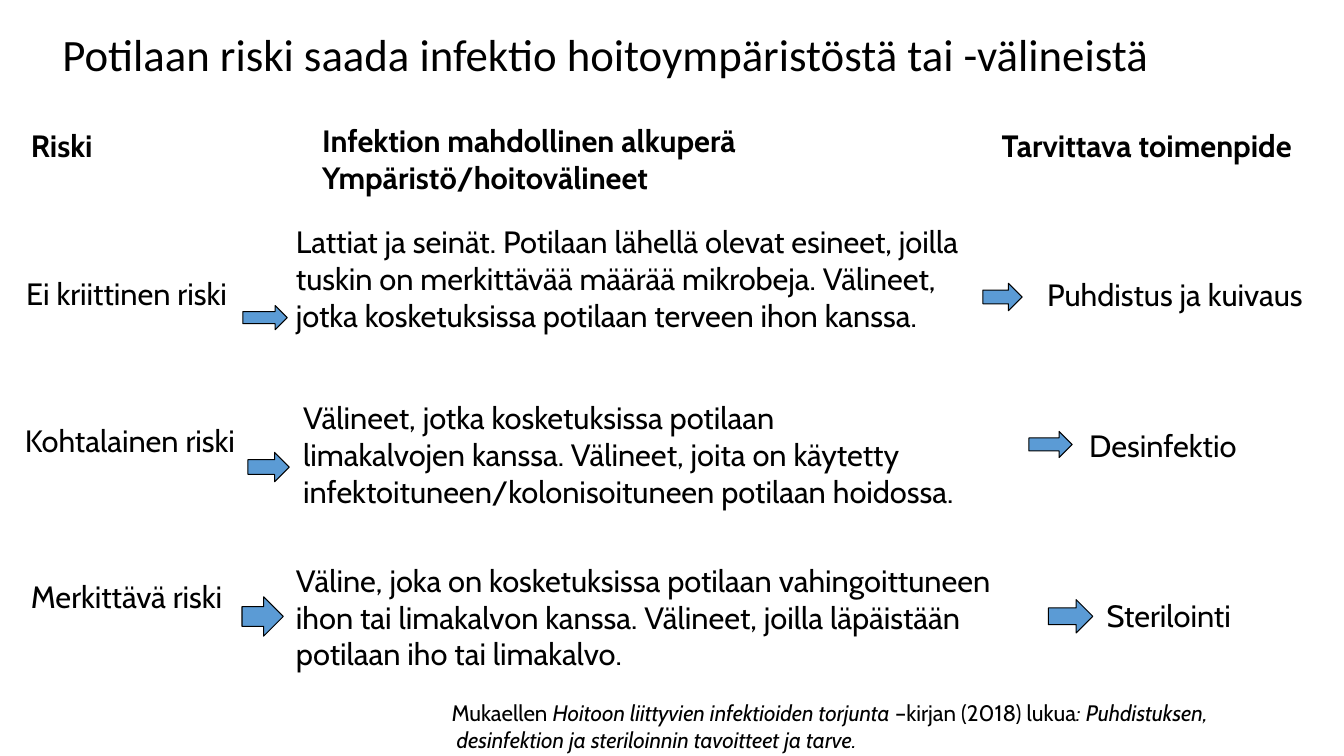
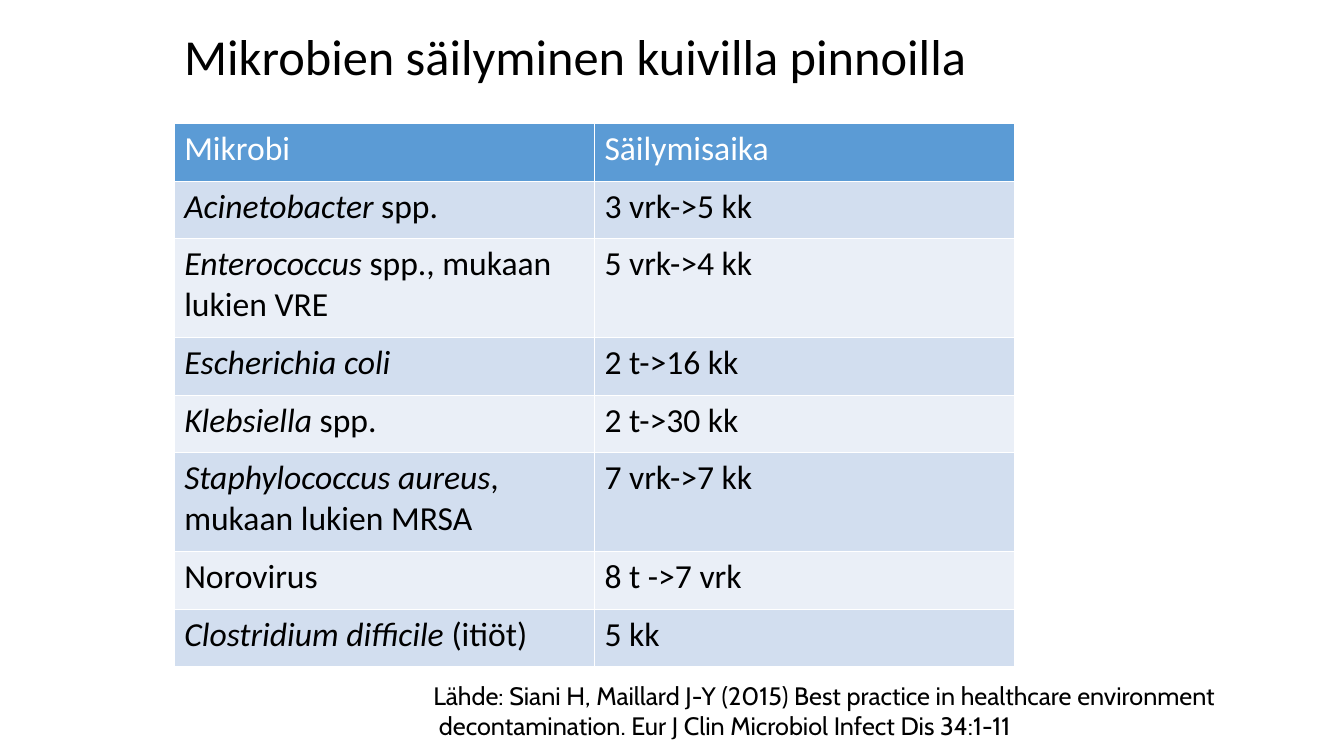
from lxml.etree import SubElement
from pptx import Presentation
from pptx.dml.color import RGBColor
from pptx.enum.shapes import MSO_SHAPE as Shape
from pptx.enum.text import MSO_ANCHOR as Anchor
from pptx.oxml.ns import qn
from pptx.util import Cm, Pt

COLORS = {"text": "000000", "accent": "5B9BD5", "white": "FFFFFF",
          "band_dark": "D2DEEF", "band_light": "EAEFF7"}
HEADING_FONT, BODY_FONT = "Calibri", "Cabin"

STYLES = {
    "title": {"name": HEADING_FONT, "size": Pt(32)},
    "large_title": {"name": HEADING_FONT, "size": Pt(36)},
    "heading": {"name": BODY_FONT, "size": Pt(22), "bold": True},
    "body": {"name": BODY_FONT, "size": Pt(22)},
    "source": {"name": BODY_FONT, "size": Pt(16)},
    "large_source": {"name": BODY_FONT, "size": Pt(18)},
    "cell": {"name": HEADING_FONT, "size": Pt(24), "bold": False},
}

# Boxes are left, top, width, height in centimetres.
COLUMN_HEADINGS = [
    ("Riski", (0.53, 3.07, 2.24, 1.19)),
    ("Infektion mahdollinen alkuperä\nYmpäristö/hoitovälineet", (7.87, 2.95, 12.01, 2.13)),
    ("Tarvittava toimenpide", (24.99, 3.07, 8.61, 1.19)),
]

# Each row has its top; the boxes of its parts are relative to that.
RISK_ROWS = [
    {"top": 5.49,
     "texts": [
         ("Ei kriittinen riski", (0.41, 1.32, 6.35, 1.19)),
         ("Lattiat ja seinät. Potilaan lähellä olevat esineet, joilla tuskin on "
          "merkittävää määrää mikrobeja. Välineet, jotka kosketuksissa potilaan "
          "terveen ihon kanssa.", (7.21, 0, 17.96, 4.01)),
         ("Puhdistus ja kuivaus", (26.14, 1.34, 7.59, 1.19))],
     "arrows": [(6.12, 2.21, 1.12, 0.61), (24.77, 1.65, 0.99, 0.69)]},
    {"top": 9.93,
     "texts": [
         ("Kohtalainen riski", (0.38, 0.56, 6.35, 1.19)),
         ("Välineet, jotka kosketuksissa potilaan\n"
          "limakalvojen kanssa. Välineet, joita on käytetty "
          "infektoituneen/kolonisoituneen potilaan hoidossa.", (7.39, 0, 18.39, 3.07)),
         ("Desinfektio", (27.2, 0.69, 4.45, 1.19))],
     "arrows": [(6.25, 1.47, 1.04, 0.74), (25.93, 0.94, 1.09, 0.66)]},
    {"top": 14.02,
     "texts": [
         ("Merkittävä riski", (0.53, 0.41, 5.36, 2.13)),
         ("Väline, joka on kosketuksissa potilaan vahingoittuneen ihon tai "
          "limakalvon kanssa. Välineet, joilla läpäistään potilaan iho tai "
          "limakalvo.", (7.21, 0, 19.15, 3.07)),
         ("Sterilointi", (27.64, 0.89, 3.99, 1.19))],
     "arrows": [(6.1, 1.02, 1.04, 0.99), (26.42, 1.09, 1.12, 0.84)]},
]

# Row height in centimetres, microbe, survival time.
SINGLE, DOUBLE = 1.45, 2.49
SURVIVAL_ROWS = [
    (SINGLE, "Mikrobi", "Säilymisaika"),
    (SINGLE, "*Acinetobacter *spp.", "3 vrk->5 kk"),
    (DOUBLE, "*Enterococcus *spp., mukaan lukien VRE", "5 vrk->4 kk"),
    (SINGLE, "*Escherichia coli*", "2 t->16 kk"),
    (SINGLE, "*Klebsiella *spp.", "2 t->30 kk"),
    (DOUBLE, "*Staphylococcus aureus*, mukaan lukien MRSA", "7 vrk->7 kk"),
    (SINGLE, "Norovirus", "8 t ->7 vrk"),
    (SINGLE, "*Clostridium difficile *(itiöt)", "5 kk"),
]


def rgb(color):
    return RGBColor.from_string(COLORS[color])


def set_all(target, values):
    for attribute, value in values.items():
        setattr(target, attribute, value)


def write(frame, text, style, color="text"):
    """Fill a frame: newlines part paragraphs, asterisks enclose italics."""
    for index, line in enumerate(text.split("\n")):
        paragraph = frame.add_paragraph() if index else frame.paragraphs[0]
        for position, piece in enumerate(line.split("*")):
            if piece:
                run = paragraph.add_run()
                run.text = piece
                set_all(run.font, {**STYLES[style], "italic": position % 2 == 1})
                run.font.color.rgb = rgb(color)


def add_text(slide, text, box, style="body"):
    frame = slide.shapes.add_textbox(*map(Cm, box)).text_frame
    frame.word_wrap = True
    write(frame, text, style)
    return frame


def add_title(slide, text, box, style="title"):
    frame = add_text(slide, text, box, style)
    frame.vertical_anchor = Anchor.MIDDLE
    frame.paragraphs[0].line_spacing = 0.9


def add_arrow(slide, box):
    arrow = slide.shapes.add_shape(Shape.RIGHT_ARROW, *map(Cm, box))
    arrow.shadow.inherit = False
    arrow.fill.solid()
    arrow.fill.fore_color.rgb = rgb("accent")
    arrow.line.color.rgb = rgb("text")
    arrow.line.width = Pt(0.75)


def add_risk_row(slide, row):
    def shifted(box):
        left, top, width, height = box
        return left, row["top"] + top, width, height

    for text, box in row["texts"]:
        add_text(slide, text, shifted(box))
    for box in row["arrows"]:
        add_arrow(slide, shifted(box))


def add_borders(cell):
    properties = cell._tc.get_or_add_tcPr()
    for side in ("a:lnL", "a:lnR", "a:lnT", "a:lnB"):
        border = SubElement(properties, qn(side), w=str(Pt(1)))
        fill = SubElement(border, qn("a:solidFill"))
        SubElement(fill, qn("a:srgbClr"), val=COLORS["white"])


def add_survival_table(slide, left, top, width):
    heights = [height for height, *_ in SURVIVAL_ROWS]
    box = map(Cm, (left, top, width, sum(heights)))
    table = slide.shapes.add_table(len(heights), 2, *box).table
    for index, (height, *texts) in enumerate(SURVIVAL_ROWS):
        table.rows[index].height = Cm(height)
        band = "band_dark" if index % 2 else "band_light"
        fill, color = (band, "text") if index else ("accent", "white")
        for cell, text in zip(table.rows[index].cells, texts):
            write(cell.text_frame, text, "cell", color)
            add_borders(cell)
            cell.fill.solid()
            cell.fill.fore_color.rgb = rgb(fill)


def build_risk_slide(slide):
    add_title(slide, "Potilaan riski saada infektio hoitoympäristöstä tai -välineistä",
              (1.32, 0.33, 30.66, 2.21))
    for text, box in COLUMN_HEADINGS:
        add_text(slide, text, box, "heading")
    for row in RISK_ROWS:
        add_risk_row(slide, row)
    add_text(slide, "Mukaellen *Hoitoon liittyvien infektioiden torjunta *–kirjan (2018) "
             "lukua*: Puhdistuksen,*\n* desinfektion ja steriloinnin tavoitteet ja tarve.*",
             (11.13, 17.5, 22.43, 1.63), "source")


def build_survival_slide(slide):
    left = 4.39
    add_title(slide, "Mikrobien säilyminen kuivilla pinnoilla",
              (left, 0.25, 23.42, 2.51), "large_title")
    add_survival_table(slide, left, 3.12, 21.18)
    add_text(slide, "Lähde: Siani H, Maillard J-Y (2015) Best practice in healthcare "
             "environment\n decontamination. Eur J Clin Microbiol Infect Dis 34:1-11",
             (10.67, 17.02, 22.28, 1.8), "large_source")


def main():
    deck = Presentation()
    set_all(deck, {"slide_width": Cm(33.87), "slide_height": Cm(19.05)})
    blank = deck.slide_layouts[6]
    for build in (build_risk_slide, build_survival_slide):
        build(deck.slides.add_slide(blank))
    deck.save("out.pptx")


if __name__ == "__main__":
    main()
